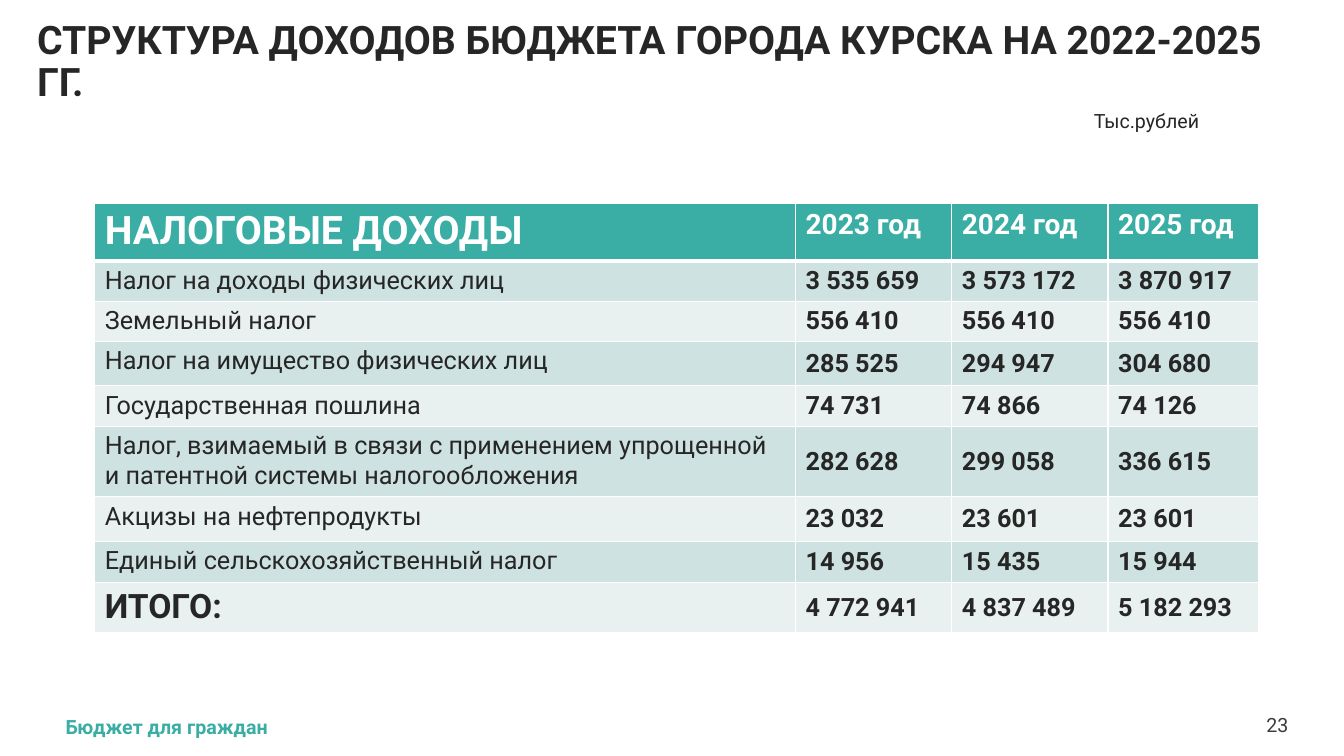
from dataclasses import dataclass

from lxml.etree import SubElement
from pptx import Presentation
from pptx.dml.color import RGBColor
from pptx.enum.text import MSO_ANCHOR as Anchor, PP_ALIGN as Align
from pptx.oxml.ns import qn
from pptx.util import Inches, Pt


@dataclass(frozen=True)
class Theme:
    font: str = "Roboto"
    teal: str = "3AADA5"
    dark: str = "262626"
    gray: str = "3C3C3C"
    white: str = "FFFFFF"
    bands: tuple = ("CEE3E1", "E8F1F0")
    title: int = 28
    total: int = 24
    year: int = 20
    body: int = 18
    small: int = 14


COLUMN_WIDTHS = (6.95, 1.55, 1.55, 1.49)
ROW_HEIGHTS = (0.48, 0.29, 0.25, 0.44, 0.38, 0.6, 0.44, 0.41, 0.48)
INCOME = (
    ("НАЛОГОВЫЕ ДОХОДЫ", "2023 год", "2024 год", "2025 год"),
    ("Налог на доходы физических лиц", "3 535 659", "3 573 172", "3 870 917"),
    ("Земельный налог", "556 410", "556 410", "556 410"),
    ("Налог на имущество физических лиц", "285 525", "294 947", "304 680"),
    ("Государственная пошлина", "74 731", "74 866", "74 126"),
    ("Налог, взимаемый в связи с применением упрощенной и патентной системы налогообложения",
     "282 628", "299 058", "336 615"),
    ("Акцизы на нефтепродукты", "23 032", "23 601", "23 601"),
    ("Единый сельскохозяйственный налог", "14 956", "15 435", "15 944"),
    ("ИТОГО:", "4 772 941", "4 837 489", "5 182 293"),
)


def write_text(frame, text, *, font, size, color, bold=False, align=Align.LEFT, line_spacing=None):
    paragraph = frame.paragraphs[0]
    paragraph.alignment = align
    if line_spacing:
        paragraph.line_spacing = line_spacing
    run = paragraph.add_run()
    run.text = text
    run.font.name = font
    run.font.size = Pt(size)
    run.font.bold = bold
    run.font.color.rgb = RGBColor.from_string(color)


class SlideBuilder:
    def __init__(self, slide, theme):
        self.slide = slide
        self.theme = theme

    def text(self, text, left, top, width, height, *, anchor=Anchor.TOP, inset=True, **style):
        shape = self.slide.shapes.add_textbox(*map(Inches, (left, top, width, height)))
        frame = shape.text_frame
        frame.word_wrap = True
        frame.vertical_anchor = anchor
        if not inset:
            frame.margin_left = frame.margin_right = 0
            frame.margin_top = frame.margin_bottom = 0
        write_text(frame, text, font=self.theme.font, **style)

    def borders(self, cell, bottom):
        properties = cell._tc.get_or_add_tcPr()
        for index, (side, width) in enumerate((("L", 1), ("R", 1), ("T", 1), ("B", bottom))):
            line = properties.makeelement(qn(f"a:ln{side}"), {"w": str(Pt(width))})
            fill = SubElement(line, qn("a:solidFill"))
            SubElement(fill, qn("a:srgbClr"), val=self.theme.white)
            properties.insert(index, line)

    def cell_style(self, row, column, last_row):
        theme = self.theme
        if row == 0:
            return dict(size=theme.year if column else theme.title, color=theme.white, bold=True)
        if column == 0 and row == last_row:
            return dict(size=theme.total, color=theme.dark, bold=True)
        return dict(size=theme.body, color=theme.dark, bold=column > 0)

    def table(self, rows, left, top, widths, heights):
        frame = self.slide.shapes.add_table(
            len(rows), len(widths), Inches(left), Inches(top),
            Inches(sum(widths)), Inches(sum(heights)))
        table = frame.table
        for column, width in zip(table.columns, widths):
            column.width = Inches(width)
        for row, height in zip(table.rows, heights):
            row.height = Inches(height)
        for row, values in enumerate(rows):
            fill = self.theme.bands[(row - 1) % 2] if row else self.theme.teal
            for column, value in enumerate(values):
                cell = table.cell(row, column)
                cell.fill.solid()
                cell.fill.fore_color.rgb = RGBColor.from_string(fill)
                cell.vertical_anchor = Anchor.MIDDLE if row and column else Anchor.TOP
                self.borders(cell, bottom=1 if row else 3)
                write_text(cell.text_frame, value, font=self.theme.font,
                           **self.cell_style(row, column, len(rows) - 1))


def main():
    presentation = Presentation()
    presentation.slide_width = Inches(13.33)
    presentation.slide_height = Inches(7.5)
    theme = Theme()
    builder = SlideBuilder(presentation.slides.add_slide(presentation.slide_layouts[6]), theme)

    builder.text("23", 12.53, 7.07, 0.25, 0.24, anchor=Anchor.MIDDLE, inset=False,
                 size=theme.small, color=theme.gray, align=Align.RIGHT)
    builder.text("Бюджет для граждан", 0.65, 7.09, 11.89, 0.24, inset=False,
                 size=theme.small, color=theme.teal, bold=True)
    builder.text("СТРУКТУРА ДОХОДОВ БЮДЖЕТА ГОРОДА КУРСКА НА 2022-2025 ГГ.",
                 0.27, 0.24, 12.82, 0.76, anchor=Anchor.MIDDLE,
                 size=theme.title, color=theme.dark, bold=True, line_spacing=0.9)
    builder.table(INCOME, 0.94, 2.02, COLUMN_WIDTHS, ROW_HEIGHTS)
    builder.text("Тыс.рублей", 10.75, 1.03, 1.72, 0.34, size=theme.small, color=theme.dark)
    presentation.save("out.pptx")


if __name__ == "__main__":
    main()
